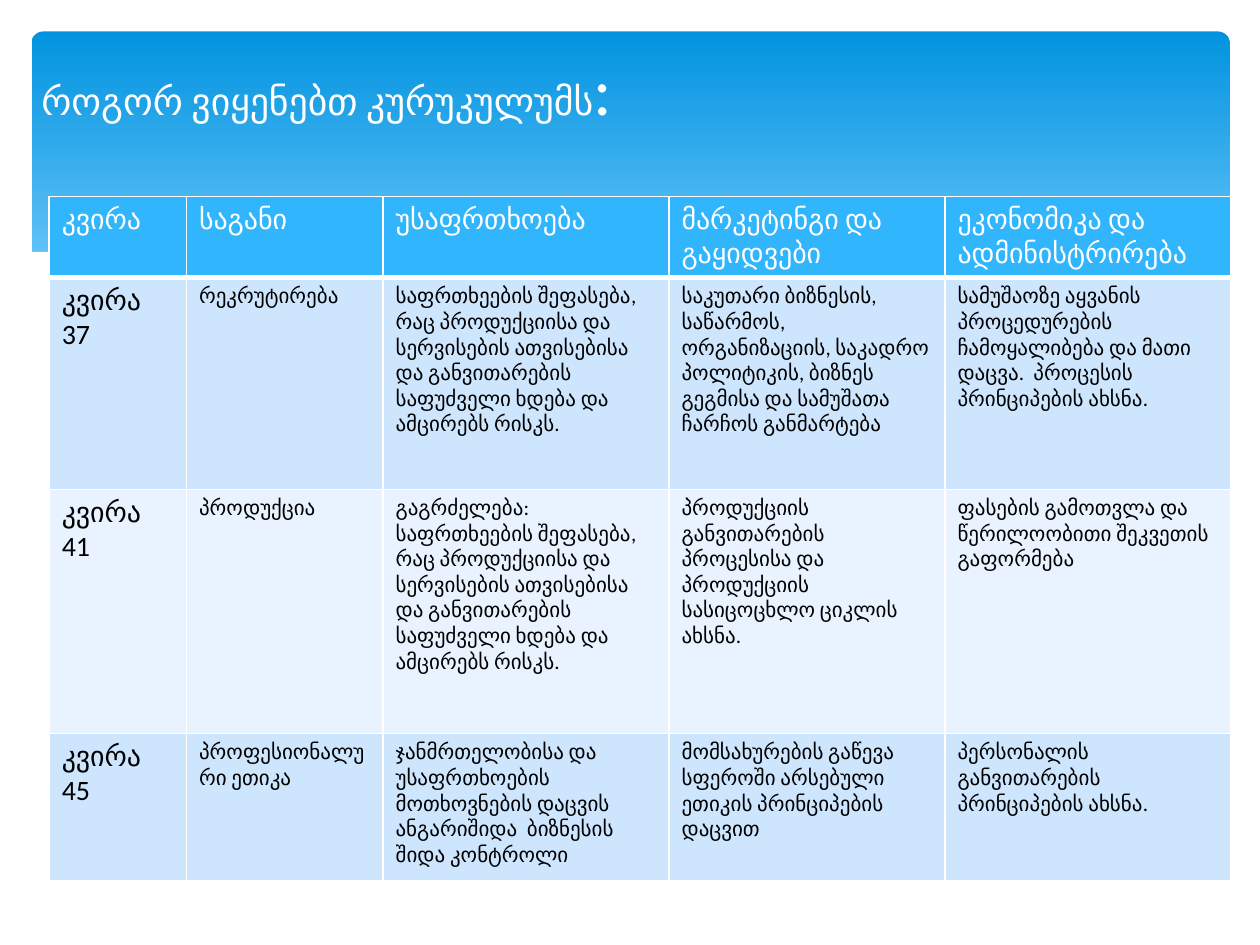
from lxml import etree
from pptx import Presentation
from pptx import util as u
from pptx.dml.color import RGBColor
from pptx.enum import shapes, text
from pptx.oxml.ns import qn

COLORS = {"white": "FFFFFF", "black": "000000", "banner_top": "0293E0",
          "banner_low": "83D3FE", "header": "31B6FD",
          "odd": "CEE5FE", "even": "E8F3FF"}

COLUMN_WIDTHS = [1.09, 1.56, 2.27, 2.19, 2.27]
ROW_HEIGHTS = [0.57, 1.68, 1.94, 1.17]
CURRICULUM = [
    ["კვირა", "საგანი", "უსაფრთხოება", "მარკეტინგი და გაყიდვები",
     "ეკონომიკა და ადმინისტრირება"],
    ["კვირა\v37", "რეკრუტირება",
     "საფრთხეების შეფასება, რაც პროდუქციისა და სერვისების ათვისებისა და "
     "განვითარების საფუძველი ხდება და ამცირებს რისკს.",
     "საკუთარი ბიზნესის, საწარმოს, ორგანიზაციის, საკადრო პოლიტიკის, ბიზნეს "
     "გეგმისა და სამუშათა ჩარჩოს განმარტება",
     "სამუშაოზე აყვანის პროცედურების ჩამოყალიბება და მათი დაცვა.  პროცესის "
     "პრინციპების ახსნა."],
    ["კვირა\v41", "პროდუქცია",
     "გაგრძელება: საფრთხეების შეფასება, რაც პროდუქციისა და სერვისების "
     "ათვისებისა და განვითარების საფუძველი ხდება და ამცირებს რისკს.",
     "პროდუქციის განვითარების პროცესისა და პროდუქციის სასიცოცხლო ციკლის ახსნა.",
     "ფასების გამოთვლა და წერილოობითი შეკვეთის გაფორმება"],
    ["კვირა\v45", "პროფესიონალური ეთიკა",
     "ჯანმრთელობისა და უსაფრთხოების მოთხოვნების დაცვის ანგარიშიდა  ბიზნესის "
     "შიდა კონტროლი",
     "მომსახურების გაწევა სფეროში არსებული ეთიკის პრინციპების დაცვით",
     "პერსონალის განვითარების პრინციპების ახსნა."],
]

# Upper edge of the white wave, relative to its box, from right to left
WAVE_EDGE = [(9.54, 0.62), (9.07, 0.75), (8.52, 0.87), (7.86, 0.93),
             (7.03, 0.9), (6.03, 0.74), (5.06, 0.55), (4.24, 0.36),
             (3.42, 0.18), (2.69, 0.06), (1.88, 0), (1.23, 0.01),
             (0.72, 0.07), (0.36, 0.15), (0.13, 0.23), (0, 0.29)]


def rgb(name):
    return RGBColor.from_string(COLORS[name])


def style_font(font, size, color):
    for attribute, value in {"name": "Calibri", "size": u.Pt(size)}.items():
        setattr(font, attribute, value)
    font.color.rgb = rgb(color)


def add_banner(slide, left, top, width, height):
    banner = slide.shapes.add_shape(
        shapes.MSO_SHAPE.ROUNDED_RECTANGLE, u.Inches(left), u.Inches(top),
        u.Inches(width), u.Inches(height))
    banner.adjustments[0] = 0.034
    banner.shadow.inherit = False
    banner.line.fill.background()
    banner.fill.gradient()
    banner.fill.gradient_angle = 270
    stops = [(0, "banner_top"), (0.9, "banner_low")]
    for stop, (position, color) in zip(banner.fill.gradient_stops, stops):
        stop.position = position
        stop.color.rgb = rgb(color)


def add_wave(slide, left, top, width, height):
    outline = WAVE_EDGE + [(0, height), (width, height)]
    points = [(left + x, top + y) for x, y in outline]
    builder = slide.shapes.build_freeform(*points[0], scale=u.Inches(1))
    builder.add_line_segments(points[1:], close=True)
    wave = builder.convert_to_shape()
    wave.shadow.inherit = False
    wave.line.fill.background()
    wave.fill.solid()
    wave.fill.fore_color.rgb = rgb("white")


def add_title(slide, left, top, width, height):
    frame = slide.shapes.add_textbox(
        u.Inches(left), u.Inches(top), u.Inches(width), u.Inches(height)).text_frame
    frame.word_wrap = True
    frame.vertical_anchor = text.MSO_ANCHOR.MIDDLE
    for words, size in [("როგორ ვიყენებთ კურუკულუმს", 21.6), (":", 39.6)]:
        run = frame.paragraphs[0].add_run()
        run.text = words
        style_font(run.font, size, "white")


def set_borders(cell, bottom):
    properties = cell._tc.get_or_add_tcPr()
    for side, points in {"L": 1, "R": 1, "T": 1, "B": bottom}.items():
        line = etree.SubElement(properties, qn(f"a:ln{side}"), w=str(u.Pt(points)))
        fill = etree.SubElement(line, qn("a:solidFill"))
        etree.SubElement(fill, qn("a:srgbClr"), val=COLORS["white"])


def add_curriculum(slide, left, top, width, height):
    table = slide.shapes.add_table(
        len(CURRICULUM), len(COLUMN_WIDTHS), u.Inches(left), u.Inches(top),
        u.Inches(width), u.Inches(height)).table
    for column, column_width in zip(table.columns, COLUMN_WIDTHS):
        column.width = u.Inches(column_width)
    for row, row_height in zip(table.rows, ROW_HEIGHTS):
        row.height = u.Inches(row_height)

    for r, entries in enumerate(CURRICULUM):
        is_header = r == 0
        band = "header" if is_header else ("odd" if r % 2 else "even")
        for c, words in enumerate(entries):
            cell = table.cell(r, c)
            cell.text = words
            set_borders(cell, 3 if is_header else 1)
            cell.fill.solid()
            cell.fill.fore_color.rgb = rgb(band)
            for run in cell.text_frame.paragraphs[0].runs:
                style_font(run.font, 16 if is_header or c == 0 else 12,
                           "white" if is_header else "black")
                run.font.bold = False


def main():
    deck = Presentation()
    deck.slide_width, deck.slide_height = u.Inches(10), u.Inches(7.5)
    slide = deck.slides.add_slide(deck.slide_layouts[6])
    # Background
    add_banner(slide, 0.25, 0.25, 9.51, 2.7)
    add_wave(slide, 0.23, 1.84, 9.54, 1.45)
    # Content
    add_curriculum(slide, 0.39, 1.56, sum(COLUMN_WIDTHS), sum(ROW_HEIGHTS))
    add_title(slide, 0.23, 0.31, 9, 0.78)
    deck.save("out.pptx")


if __name__ == "__main__":
    main()
